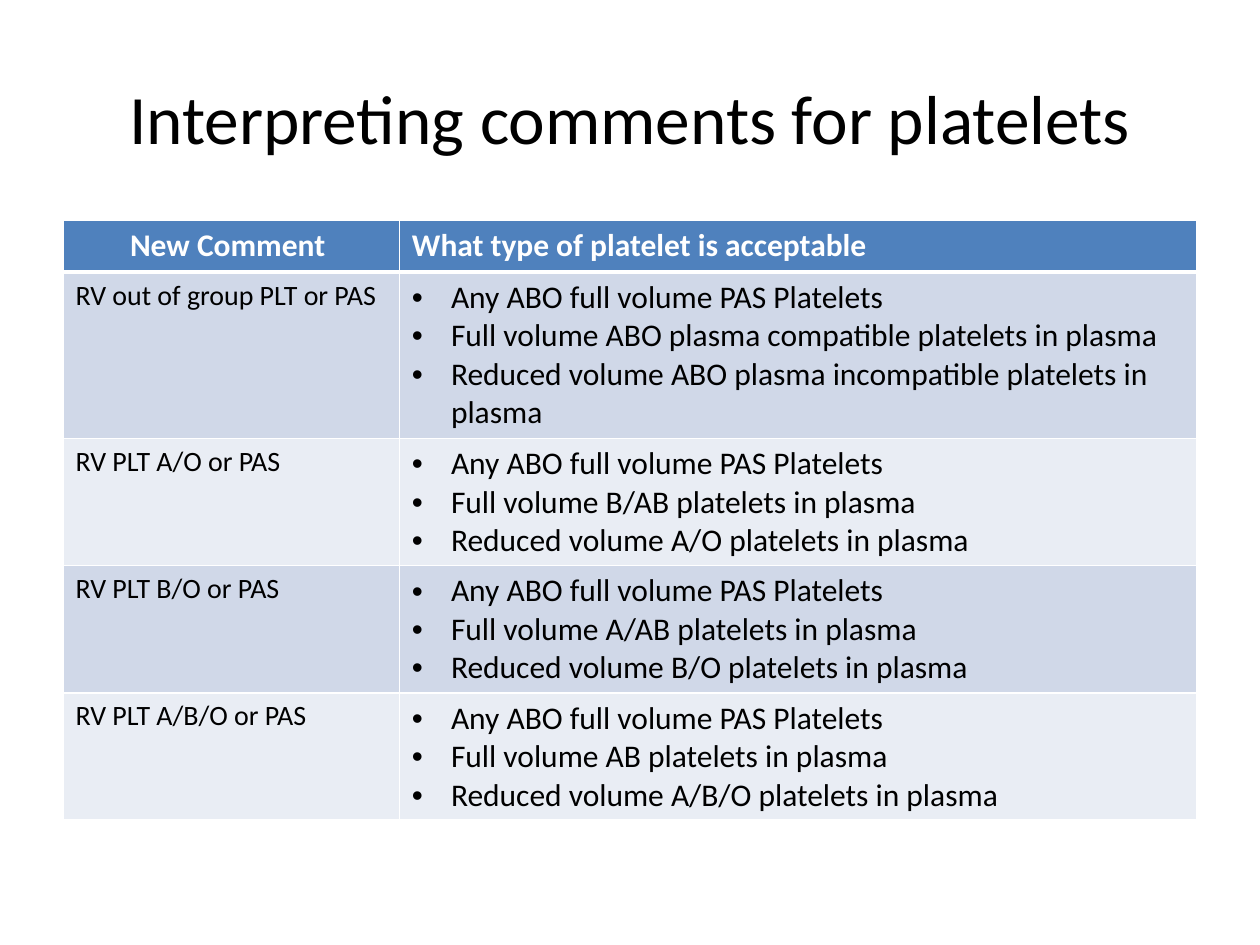
"""Build a slide with a table explaining platelet comments."""
from dataclasses import dataclass

from lxml import etree
from pptx import Presentation
from pptx import util as u
from pptx.dml.color import RGBColor
from pptx.enum import text
from pptx.oxml.ns import qn


@dataclass(frozen=True)
class Theme:
    font: str = "Calibri"
    ink: str = "000000"
    white: str = "FFFFFF"
    header: str = "4F81BD"
    bands: tuple = ("D0D8E8", "E9EDF4")
    title_size: float = 39.6
    body_size: float = 18
    comment_size: float = 16
    rule: float = 1
    header_rule: float = 3
    indent: float = 0.31


class Deck:
    def __init__(self, theme):
        self.theme = theme
        self.prs = Presentation()
        self.prs.slide_width, self.prs.slide_height = u.Inches(10), u.Inches(7.5)
        self.s = self.prs.slides.add_slide(self.prs.slide_layouts[6])

    def run(self, p, words, size, color, bold=False):
        r = p.add_run()
        r.text = words
        r.font.name, r.font.size, r.font.bold = self.theme.font, u.Pt(size), bold
        r.font.color.rgb = RGBColor.from_string(color)

    def title(self, words, left, top, width, height):
        sp = self.s.shapes.add_textbox(*map(u.Inches, (left, top, width, height)))
        tf = sp.text_frame
        tf.word_wrap = True
        tf.vertical_anchor = text.MSO_ANCHOR.MIDDLE
        p = tf.paragraphs[0]
        p.alignment = text.PP_ALIGN.CENTER
        self.run(p, words, self.theme.title_size, self.theme.ink)

    def bullet(self, p):
        pPr = p._p.get_or_add_pPr()
        indent = u.Inches(self.theme.indent)
        pPr.set("marL", str(indent))
        pPr.set("indent", str(-indent))
        etree.SubElement(pPr, qn("a:buFont")).set("typeface", "Arial")
        etree.SubElement(pPr, qn("a:buChar")).set("char", "•")

    def borders(self, cell, top, bottom):
        tcPr = cell._tc.get_or_add_tcPr()
        sides = {"L": self.theme.rule, "R": self.theme.rule, "T": top, "B": bottom}
        for side, width in sides.items():
            ln = etree.SubElement(tcPr, qn(f"a:ln{side}"), w=str(u.Pt(width)))
            fill = etree.SubElement(ln, qn("a:solidFill"))
            etree.SubElement(fill, qn("a:srgbClr"), val=self.theme.white)

    def cell(self, cell, lines, fill, size, color, top, bottom,
             bold=False, align=None, bulleted=False):
        self.borders(cell, top, bottom)
        cell.fill.solid()
        cell.fill.fore_color.rgb = RGBColor.from_string(fill)
        tf = cell.text_frame
        for i, line in enumerate(lines):
            p = tf.add_paragraph() if i else tf.paragraphs[0]
            if bulleted:
                self.bullet(p)
            p.alignment = align
            self.run(p, line, size, color, bold)

    def table(self, headings, rows, left, top, widths, heights):
        t = self.theme
        frame = self.s.shapes.add_table(
            len(heights), len(widths),
            *map(u.Inches, (left, top, sum(widths), sum(heights))))
        tbl = frame.table
        tbl.first_row = tbl.horz_banding = False
        for col, width in zip(tbl.columns, widths):
            col.width = u.Inches(width)
        for row, height in zip(tbl.rows, heights):
            row.height = u.Inches(height)
        aligns = (text.PP_ALIGN.CENTER, text.PP_ALIGN.LEFT)
        for c, (heading, align) in enumerate(zip(headings, aligns)):
            self.cell(tbl.cell(0, c), [heading], t.header, t.body_size, t.white,
                      t.rule, t.header_rule, bold=True, align=align)
        for i, (comment, accepted) in enumerate(rows):
            fill = t.bands[i % 2]
            rule = t.rule if i else t.header_rule
            self.cell(tbl.cell(i + 1, 0), [comment], fill, t.comment_size, t.ink,
                      rule, t.rule)
            self.cell(tbl.cell(i + 1, 1), accepted, fill, t.body_size, t.ink,
                      rule, t.rule, bulleted=True)


def main():
    any_abo = "Any ABO full volume PAS Platelets"
    rows = [("RV out of group PLT or PAS",
             [any_abo,
              "Full volume ABO plasma compatible platelets in plasma",
              "Reduced volume ABO plasma incompatible platelets in plasma"])]
    for reduced, full in (("A/O", "B/AB"), ("B/O", "A/AB"), ("A/B/O", "AB")):
        rows.append((f"RV PLT {reduced} or PAS",
                     [any_abo,
                      f"Full volume {full} platelets in plasma",
                      f"Reduced volume {reduced} platelets in plasma"]))
    deck = Deck(Theme())
    deck.title("Interpreting comments for platelets", 0.5, 0.3, 9, 1.25)
    deck.table(("New Comment ", "What type of platelet is acceptable"), rows,
               0.5, 1.75, (2.67, 6.33), (0.41, 1.32, 1.01, 1.01, 1.01))
    deck.prs.save("out.pptx")


if __name__ == "__main__":
    main()
